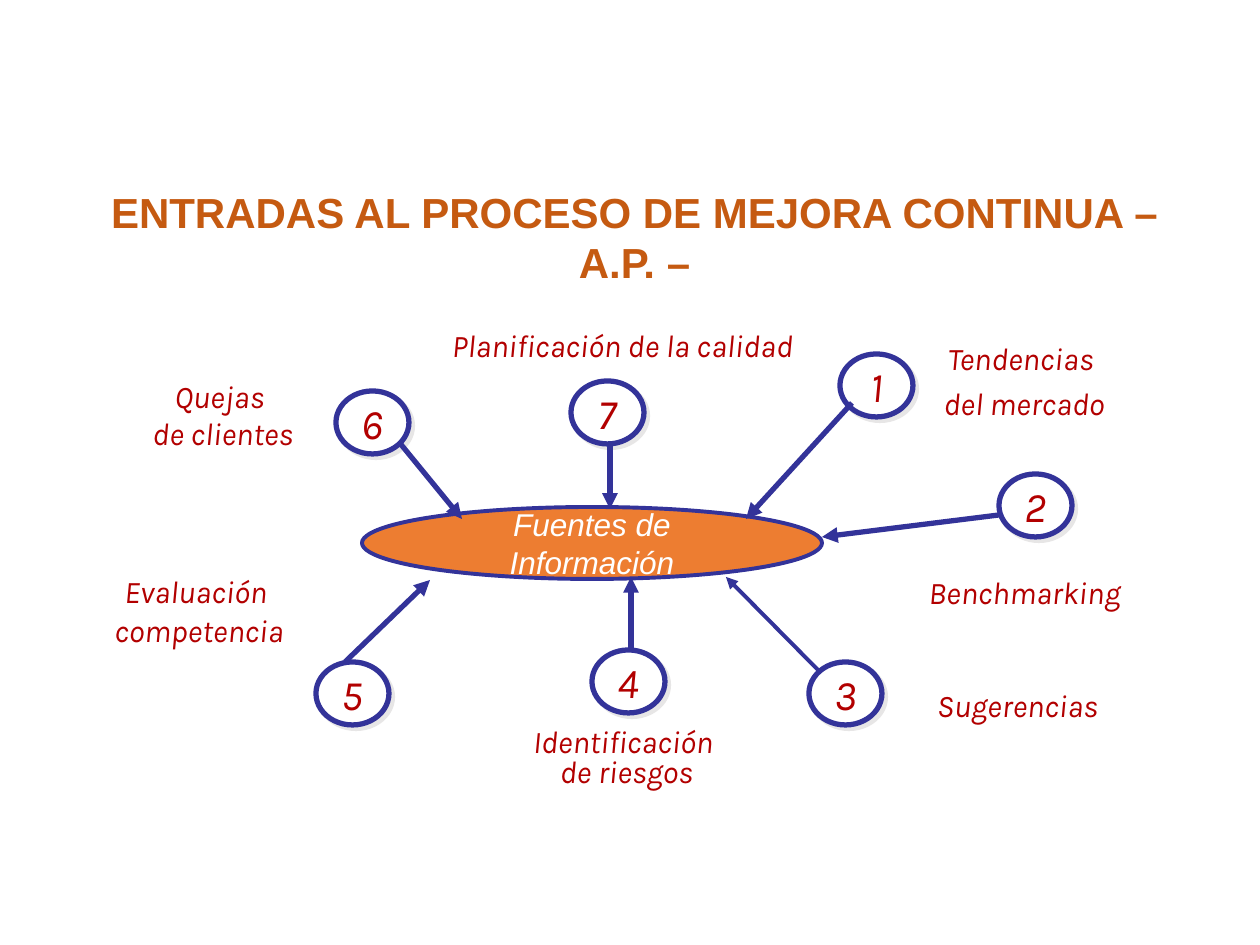
import pptx
import pptx.util
import pptx.dml.color
import pptx.enum.shapes
import pptx.enum.text
import pptx.oxml
import pptx.oxml.ns

THEME = {
    "title": "C55A11", "label": "B20000", "line": "333399", "hub": "ED7D31",
    "white": "FFFFFF", "black": "000000", "shade": "E7E6E6",
    "sans": "Arial", "hand": "Karla", "big": 24, "body": 18,
    "thick": 3, "thin": 2.25,
}
SCALE = 914400 / 126
SIZE = (1260, 945)
DISC = (73, 63)

TITLE = ("ENTRADAS AL PROCESO DE MEJORA CONTINUA – A.P. –", (72, 180, 1125, 115))
HUB = ("Fuentes de Información", (362, 507, 460, 72))

# number, disc corner, arrow tip, arrow start, line weight
INPUTS = [
    ("1", (840, 354), (746, 519), (852, 403), "thick"),
    ("2", (999, 474), (822, 537), (999, 515), "thick"),
    ("3", (809, 662), (726, 577), (820, 672), "thin"),
    ("4", (592, 650), (631, 577), (631, 651), "thick"),
    ("5", (316, 662), (430, 580), (345, 662), "thick"),
    ("6", (336, 391), (462, 519), (399, 442), "thick"),
    ("7", (571, 381), (610, 509), (610, 446), "thick"),
]

# lines, box, line spacing, space before in points, anchor
LABELS = [
    (["Tendencias ", "del mercado"], (852, 333, 344, 97), 1, 4, "TOP"),
    (["Benchmarking"], (863, 567, 323, 50), 1, 0, "TOP"),
    (["Sugerencias "], (919, 668, 204, 62), 1.3, 0, "MIDDLE"),
    (["Identificación ", "de riesgos"], (515, 723, 223, 74), 0.8, 0, "TOP"),
    (["Evaluación ", "competencia"], (98, 572, 202, 86), 0.85, 4, "TOP"),
    (["Quejas ", "de clientes"], (83, 370, 280, 89), 1, 0, "MIDDLE"),
    (["Planificación de la calidad"], (426, 320, 393, 50), 1, 0, "TOP"),
]


def px(*nums):
    return [pptx.util.Emu(round(n * SCALE)) for n in nums]


def color(name):
    return pptx.dml.color.RGBColor.from_string(THEME[name])


def effect(name=None):
    """Effect list with a shadow in the named colour, or with none."""
    shade = ""
    if name:
        shade = (f'<a:outerShdw dist="35560" dir="2700000" algn="ctr">'
                 f'<a:srgbClr val="{THEME[name]}"/></a:outerShdw>')
    space = pptx.oxml.ns.nsdecls("a")
    return pptx.oxml.parse_xml(f"<a:effectLst {space}>{shade}</a:effectLst>")


def write(shape, lines, ink, face, size, anchor="TOP", lead=1, gap=0,
          bold=None, slant=True, wrap=True):
    frame = shape.text_frame
    frame.word_wrap = wrap
    frame.vertical_anchor = getattr(pptx.enum.text.MSO_ANCHOR, anchor)
    frame.text = "\n".join(lines)
    for i, para in enumerate(frame.paragraphs):
        para.alignment = pptx.enum.text.PP_ALIGN.CENTER
        if lead != 1:
            para.line_spacing = lead
        if i and gap:
            para.space_before = pptx.util.Pt(gap)
        font = para.font
        font.name, font.size = THEME[face], pptx.util.Pt(THEME[size])
        font.bold, font.italic = bold, slant
        font.color.rgb = color(ink)


def oval(slide, box, fill, weight):
    kind = pptx.enum.shapes.MSO_SHAPE.OVAL
    shape = slide.shapes.add_shape(kind, *px(*box))
    shape.shadow.inherit = False
    shape.fill.solid()
    shape.fill.fore_color.rgb = color(fill)
    shape.line.color.rgb = color("line")
    shape.line.width = pptx.util.Pt(THEME[weight])
    return shape


def arrow(slide, tip, start, weight):
    kind = pptx.enum.shapes.MSO_CONNECTOR.STRAIGHT
    link = slide.shapes.add_connector(kind, *px(*tip, *start))
    link.line.color.rgb = color("line")
    link.line.width = pptx.util.Pt(THEME[weight])
    space = pptx.oxml.ns.nsdecls("a")
    head = pptx.oxml.parse_xml(f'<a:headEnd {space} type="triangle"/>')
    link.line._get_or_add_ln().append(head)
    link._element.spPr.append(effect())


def main():
    deck = pptx.Presentation()
    deck.slide_width, deck.slide_height = px(*SIZE)
    slide = deck.slides.add_slide(deck.slide_layouts[6])

    text, box = TITLE
    title = slide.shapes.add_textbox(*px(*box))
    write(title, [text], "title", "sans", "big", bold=True, slant=None)
    run = title.text_frame.paragraphs[0].runs[0]
    run._r.get_or_add_rPr().append(effect("black"))

    text, box = HUB
    write(oval(slide, box, "hub", "thin"), [text], "white", "sans", "body",
          "MIDDLE")

    for num, spot, *_ in INPUTS:
        disc = oval(slide, spot + DISC, "white", "thick")
        write(disc, [num], "label", "hand", "big", "MIDDLE", wrap=False)
        props = disc._element.spPr
        props.replace(props.find(pptx.oxml.ns.qn("a:effectLst")),
                      effect("shade"))
    for _, _, tip, start, weight in INPUTS:
        arrow(slide, tip, start, weight)

    for lines, box, lead, gap, anchor in LABELS:
        label = slide.shapes.add_textbox(*px(*box))
        write(label, lines, "label", "hand", "body", anchor, lead, gap)

    deck.save("out.pptx")


if __name__ == "__main__":
    main()
